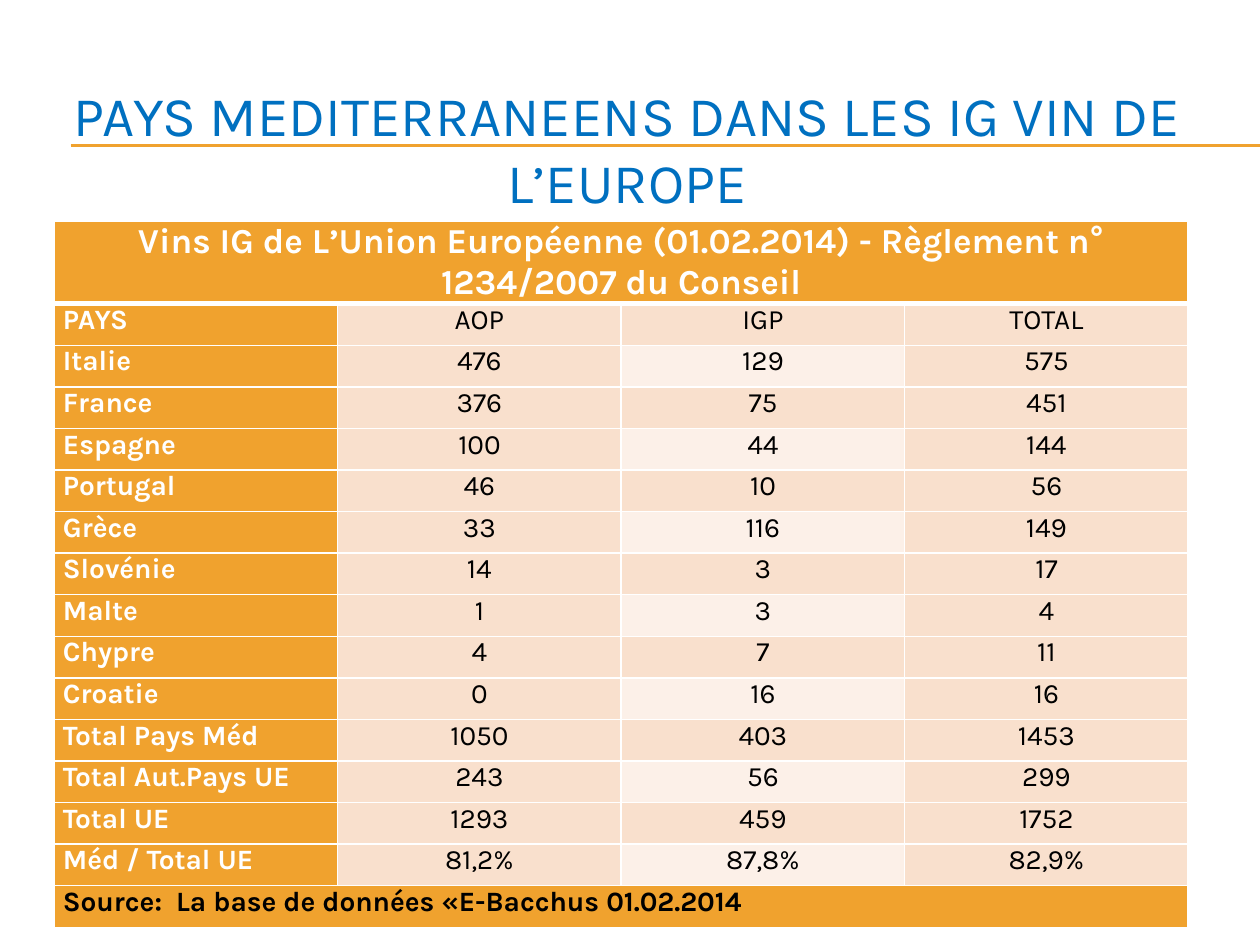
from lxml.etree import SubElement
from pptx import Presentation
from pptx.dml.color import RGBColor
from pptx.enum.shapes import MSO_CONNECTOR
from pptx.enum.text import MSO_ANCHOR, PP_ALIGN
from pptx.oxml.ns import qn
from pptx.util import Inches, Pt

FONT = "Karla"
AMBER = RGBColor(0xF0, 0xA2, 0x2E)
PEACH = RGBColor(0xF9, 0xE0, 0xCD)
CREAM = RGBColor(0xFC, 0xF0, 0xE8)
BLUE = RGBColor(0x00, 0x70, 0xC0)
WHITE = RGBColor(0xFF, 0xFF, 0xFF)
BLACK = RGBColor(0x00, 0x00, 0x00)

TITLE = "PAYS MEDITERRANEENS DANS LES IG VIN DE L’EUROPE"
HEAD = "Vins IG de L’Union Européenne (01.02.2014) - Règlement n° 1234/2007 du Conseil"
SOURCE = "Source:  La base de données «E-Bacchus 01.02.2014"
ROWS = [
    ("PAYS", "AOP", "IGP", "TOTAL"),
    ("Italie", "476", "129", "575"),
    ("France", "376", "75", "451"),
    ("Espagne", "100", "44", "144"),
    ("Portugal", "46", "10", "56"),
    ("Grèce", "33", "116", "149"),
    ("Slovénie", "14", "3", "17"),
    ("Malte", "1", "3", "4"),
    ("Chypre", "4", "7", "11"),
    ("Croatie", "0", "16", "16"),
    ("Total Pays Méd", "1050", "403", "1453"),
    ("Total Aut.Pays UE", "243", "56", "299"),
    ("Total UE", "1293", "459", "1752"),
    ("Méd / Total UE", "81,2%", "87,8%", "82,9%"),
]


def write(frame, text, size=16, color=BLACK, bold=False, align=PP_ALIGN.CENTER):
    para = frame.paragraphs[0]
    para.alignment = align
    run = para.add_run()
    run.text = text
    font = run.font
    font.name, font.size, font.bold = FONT, Pt(size), bold
    font.color.rgb = color


def add_rules(slide, left, top, width):
    """Draw the double line that runs behind the title."""
    for y in (top, top + Inches(0.01)):
        rule = slide.shapes.add_connector(
            MSO_CONNECTOR.STRAIGHT, left, y, left + width, y)
        rule.line.color.rgb = AMBER
        rule.line.width = Pt(0.75)
        SubElement(rule._element.spPr, qn("a:effectLst"))


def add_title(slide, left, top, width, height):
    title = slide.shapes.title
    title.left, title.top, title.width, title.height = left, top, width, height
    frame = title.text_frame
    frame.word_wrap = True
    frame.vertical_anchor = MSO_ANCHOR.MIDDLE
    write(frame, TITLE, size=32, color=BLUE)
    slide.shapes._spTree.append(title._element)  # in front of the rules


def set_edges(cell, top=1, bottom=1):
    """Give the cell white borders, with widths in points."""
    props = cell._tc.get_or_add_tcPr()
    for tag, width in (("lnL", 1), ("lnR", 1), ("lnT", top), ("lnB", bottom)):
        line = SubElement(props, qn(f"a:{tag}"), w=str(Pt(width)))
        fill = SubElement(line, qn("a:solidFill"))
        SubElement(fill, qn("a:srgbClr"), val=str(WHITE))


def style_cell(cell, fill, **edges):
    cell.margin_left = cell.margin_right = Inches(0.07)
    cell.margin_top = cell.margin_bottom = 0
    set_edges(cell, **edges)
    cell.fill.solid()
    cell.fill.fore_color.rgb = fill


def add_wines(slide, left, top, width, height):
    count, cols = len(ROWS) + 2, len(ROWS[0])
    last = count - 1
    table = slide.shapes.add_table(count, cols, left, top, width, height).table
    for col in table.columns:
        col.width = width // cols
    for row in table.rows:
        row.height = Inches(0.33)
    table.rows[0].height = height - last * Inches(0.33)

    for r in (0, last):
        for c in range(cols):
            style_cell(table.cell(r, c), AMBER, bottom=1 if r else 3)
        table.cell(r, 0).merge(table.cell(r, cols - 1))
    write(table.cell(0, 0).text_frame, HEAD, size=20, color=WHITE, bold=True)
    write(table.cell(last, 0).text_frame, SOURCE, bold=True, align=PP_ALIGN.LEFT)

    for r, row in enumerate(ROWS, 1):
        edge = 3 if r == 1 else 1
        for c, text in enumerate(row):
            cell = table.cell(r, c)
            if c == 0:
                style_cell(cell, AMBER, top=edge)
                write(cell.text_frame, text, color=WHITE, bold=True,
                      align=PP_ALIGN.LEFT)
            else:
                pale = c == 2 and r % 2 == 0
                style_cell(cell, CREAM if pale else PEACH, top=edge)
                write(cell.text_frame, text)


def main():
    deck = Presentation()
    deck.slide_width, deck.slide_height = Inches(10), Inches(7.5)
    slide = deck.slides.add_slide(deck.slide_layouts[5])
    add_rules(slide, Inches(0.56), Inches(1.15), Inches(9.44))
    add_title(slide, Inches(0.12), Inches(0.71), Inches(9.72), Inches(0.92))
    add_wines(slide, Inches(0.43), Inches(1.76), Inches(9), Inches(5.5))
    deck.save("out.pptx")


if __name__ == "__main__":
    main()
